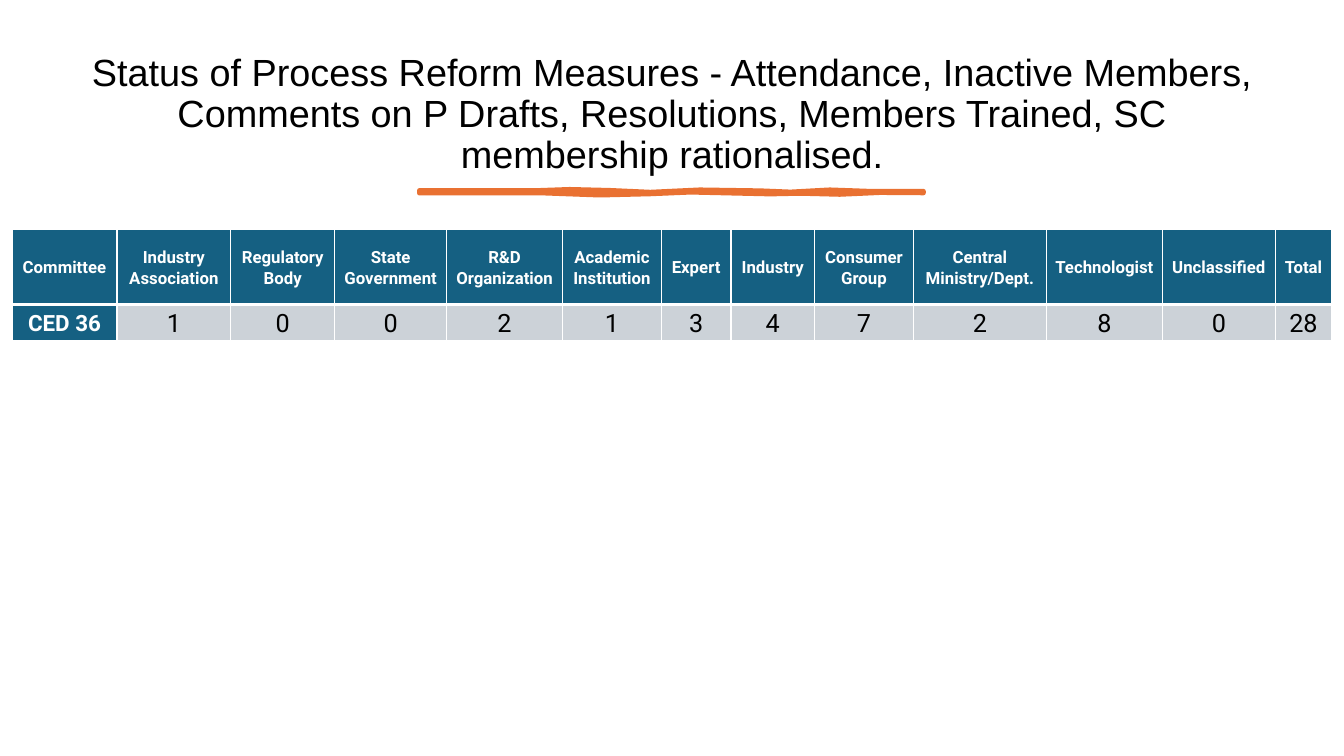
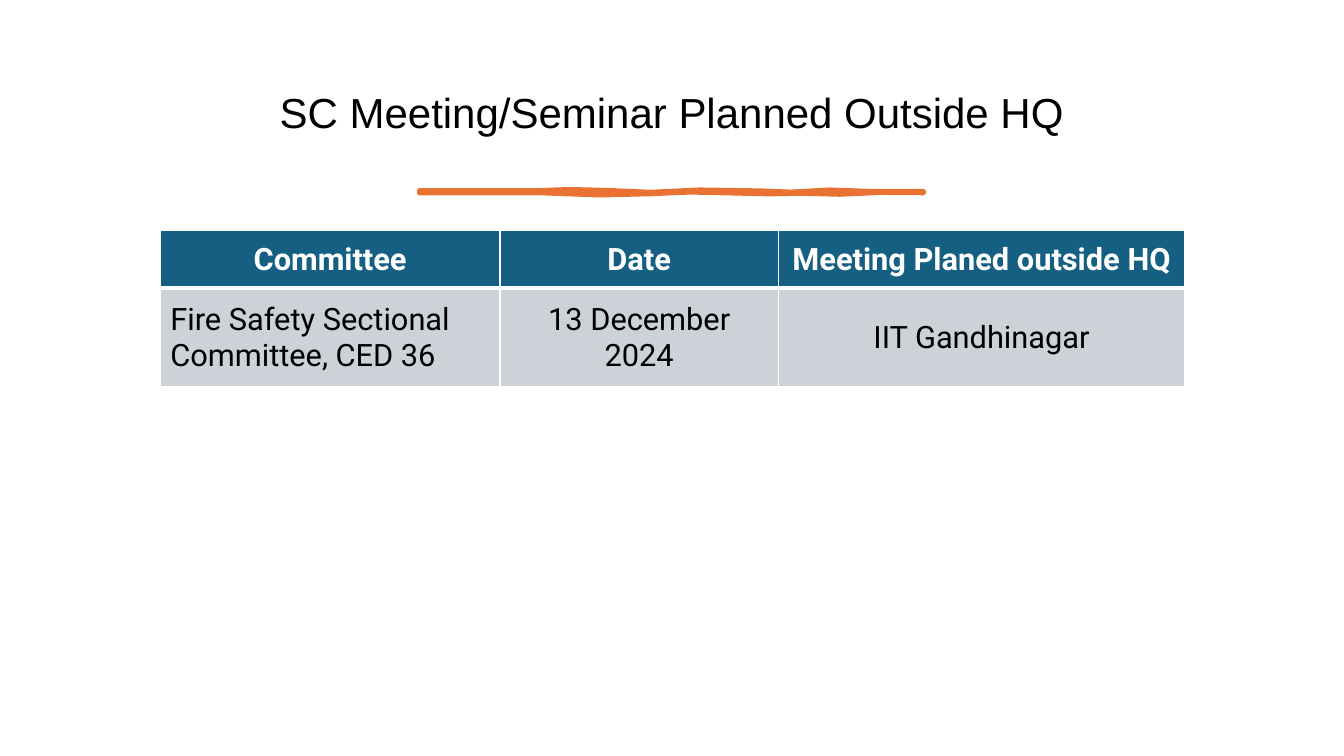
from dataclasses import dataclass

from lxml.etree import SubElement
from pptx import Presentation
from pptx.dml.color import RGBColor as Color
from pptx.enum.text import MSO_ANCHOR as Anchor, PP_ALIGN as Align
from pptx.oxml.ns import qn
from pptx.util import Pt

PX = 9144


@dataclass(frozen=True)
class Theme:
    title_font: str = "Arial"
    table_font: str = "Roboto"
    ink: str = "000000"
    paper: str = "FFFFFF"
    accent: str = "E97132"
    header: str = "156082"
    body: str = "CCD2D8"
    stroke: float = 3.25
    rule: float = 1
    header_rule: float = 3


THEME = Theme()
SLIDE_SIZE = (1333, 750)
TITLE_BOX = (70, 46, 1193, 137)

STROKE_TOP = [
    (4160, 1889), (5350, 1889), (5650, 1878), (6050, 1888), (6450, 1906),
    (6940, 1883), (7540, 1892), (7840, 1904), (8230, 1883), (8630, 1897),
    (9160, 1897),
]
STROKE_BOTTOM = [
    (4160, 1917), (5350, 1915), (5950, 1937), (6450, 1925), (6850, 1908),
    (7640, 1926), (7940, 1920), (8330, 1930), (8730, 1912), (9160, 1915),
]

SLIDES = [
    {
        "title": "Status of Process Reform Measures - Attendance, Inactive Members, "
                 "Comments on P Drafts, Resolutions, Members Trained, SC "
                 "membership rationalised.",
        "title_size": 27,
        "origin": (12, 228),
        "columns": [104, 113, 103, 111, 115, 98, 69, 83, 98, 132, 115, 112, 56],
        "rows": [74, 36],
        "header": [
            "Committee", "Industry Association", "Regulatory Body",
            "State Government", "R&D Organization", "Academic Institution",
            "Expert", "Industry", "Consumer Group", "Central Ministry/Dept.",
            "Technologist", "Unclassified", "Total",
        ],
        "body": ["CED 36", "1", "0", "0", "2", "1", "3", "4", "7", "2", "8", "0", "28"],
        "sizes": {"header": 12, "label": 16, "body": 18},
        "label_is_header": True,
        "margins": (7, 0),
        "line_spacing": 1.07,
        "space_after": 8,
    },
    {
        "title": "SC Meeting/Seminar Planned Outside HQ",
        "title_size": 30,
        "origin": (159, 229),
        "columns": [337, 276, 403],
        "rows": [57, 98],
        "header": ["Committee", "Date", "Meeting Planed outside HQ"],
        "body": [
            "Fire Safety Sectional Committee, CED 36",
            "13 December 2024",
            "IIT Gandhinagar",
        ],
        "sizes": {"header": 22, "label": 22, "body": 22},
        "label_is_header": False,
        "margins": (10, 5),
        "line_spacing": 1.0,
        "space_after": 0,
    },
]


def px(*lengths):
    return [length * PX for length in lengths]


def add_run(paragraph, text, font, size, color, bold=False):
    run = paragraph.add_run()
    run.text = text
    run.font.name = font
    run.font.size = Pt(size)
    run.font.bold = bold
    run.font.color.rgb = Color.from_string(color)


def add_title(slide, text, size):
    frame = slide.shapes.add_textbox(*px(*TITLE_BOX)).text_frame
    frame.word_wrap = True
    frame.vertical_anchor = Anchor.MIDDLE
    paragraph = frame.paragraphs[0]
    paragraph.alignment = Align.CENTER
    paragraph.line_spacing = 0.9
    add_run(paragraph, text, THEME.title_font, size, THEME.ink)


def add_brush_stroke(slide):
    start, *outline = STROKE_TOP + STROKE_BOTTOM[::-1]
    builder = slide.shapes.build_freeform(*start, scale=PX / 10)
    builder.add_line_segments(outline, close=True)
    shape = builder.convert_to_shape()
    shape.shadow.inherit = False
    shape.fill.solid()
    shape.fill.fore_color.rgb = Color.from_string(THEME.accent)
    shape.line.color.rgb = Color.from_string(THEME.accent)
    shape.line.width = Pt(THEME.stroke)


def set_borders(cell, top, bottom):
    properties = cell._tc.get_or_add_tcPr()
    widths = {"lnL": THEME.rule, "lnR": THEME.rule, "lnT": top, "lnB": bottom}
    for side, width in widths.items():
        line = SubElement(properties, qn(f"a:{side}"), w=str(Pt(width)))
        fill = SubElement(line, qn("a:solidFill"))
        SubElement(fill, qn("a:srgbClr"), val=THEME.paper)


def fill_cell(cell, text, row, column, content):
    is_label = row == 1 and column == 0
    is_header = row == 0 or (is_label and content["label_is_header"])
    role = "header" if row == 0 else "label" if is_label else "body"
    if row == 0:
        set_borders(cell, THEME.rule, THEME.header_rule)
    else:
        set_borders(cell, THEME.header_rule, THEME.rule)
    cell.fill.solid()
    cell.fill.fore_color.rgb = Color.from_string(THEME.header if is_header else THEME.body)
    side, edge = px(*content["margins"])
    cell.margin_left = cell.margin_right = side
    cell.margin_top = cell.margin_bottom = edge
    cell.vertical_anchor = Anchor.MIDDLE
    paragraph = cell.text_frame.paragraphs[0]
    paragraph.alignment = Align.LEFT if is_label and not is_header else Align.CENTER
    paragraph.line_spacing = content["line_spacing"]
    paragraph.space_after = Pt(content["space_after"])
    add_run(paragraph, text, THEME.table_font, content["sizes"][role],
            THEME.paper if is_header else THEME.ink, is_header)


def add_status_table(slide, content):
    columns, rows = content["columns"], content["rows"]
    box = px(*content["origin"], sum(columns), sum(rows))
    table = slide.shapes.add_table(len(rows), len(columns), *box).table
    table.horz_banding = False
    for column, width in zip(table.columns, px(*columns)):
        column.width = width
    for row, height in zip(table.rows, px(*rows)):
        row.height = height
    for row, texts in enumerate((content["header"], content["body"])):
        for column, text in enumerate(texts):
            fill_cell(table.cell(row, column), text, row, column, content)


def main():
    presentation = Presentation()
    presentation.slide_width, presentation.slide_height = px(*SLIDE_SIZE)
    blank = presentation.slide_layouts[6]
    for content in SLIDES:
        slide = presentation.slides.add_slide(blank)
        add_title(slide, content["title"], content["title_size"])
        add_brush_stroke(slide)
        add_status_table(slide, content)
    presentation.save("out.pptx")


if __name__ == "__main__":
    main()
